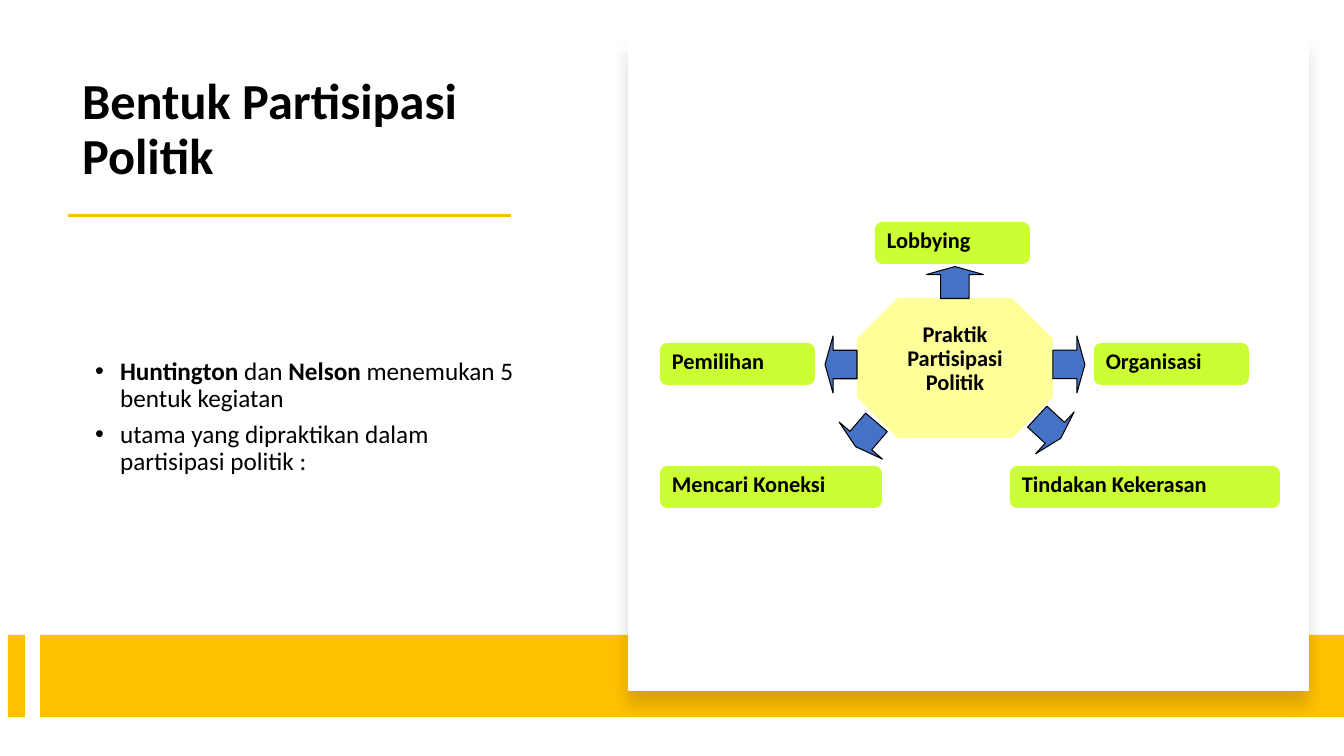
from lxml import etree
from pptx import Presentation
from pptx.dml.color import RGBColor
from pptx.enum.shapes import MSO_SHAPE as Preset
from pptx.enum.text import MSO_ANCHOR as Anchor, MSO_AUTO_SIZE as AutoSize, PP_ALIGN as Align
from pptx.oxml.ns import qn
from pptx.util import Pt

EMU_PER_PX = 914400 / 100.8
COLORS = {
    "gold": "FFC000",
    "white": "FFFFFF",
    "black": "000000",
    "lime": "CCFF33",
    "cream": "FFFF99",
    "blue": "4472C4",
}


def px(*lengths):
    return [round(length * EMU_PER_PX) for length in lengths]


def write_text(paragraph, text, size=16, bold=True, align=Align.LEFT, space_after=0):
    run = paragraph.add_run()
    run.text = text
    run.font.name = "Calibri"
    run.font.size = Pt(size)
    run.font.bold = bold
    run.font.color.rgb = RGBColor.from_string(COLORS["black"])
    paragraph.alignment = align
    paragraph.line_spacing = 0.9
    paragraph.space_before = Pt(0)
    paragraph.space_after = Pt(space_after)


presentation = Presentation()
presentation.slide_width, presentation.slide_height = px(1344, 756)
slide = presentation.slides.add_slide(presentation.slide_layouts[1])
title, body = slide.placeholders

# Title and list
for placeholder, top, height, anchor in (
    (title, 58, 132, Anchor.BOTTOM),
    (body, 224, 387, Anchor.MIDDLE),
):
    placeholder.left, placeholder.top, placeholder.width, placeholder.height = px(72, top, 472, height)
    placeholder.text_frame.word_wrap = True
    placeholder.text_frame.auto_size = AutoSize.NONE
    placeholder.text_frame.vertical_anchor = anchor

write_text(title.text_frame.paragraphs[0], "Bentuk Partisipasi Politik", size=36, space_after=6)

list_items = [
    [("Huntington ", True), ("dan ", False), ("Nelson", True), (" menemukan 5 bentuk kegiatan", False)],
    [("utama yang dipraktikan dalam partisipasi politik :", False)],
]
body.text_frame.add_paragraph()
for paragraph, runs in zip(body.text_frame.paragraphs, list_items):
    for text, bold in runs:
        write_text(paragraph, text, size=18, bold=bold, space_after=6)
    properties = paragraph._p.get_or_add_pPr()
    margin, indent = px(38, -25)
    properties.set("marL", str(margin))
    properties.set("indent", str(indent))
    etree.SubElement(properties, qn("a:buFont")).set("typeface", "Arial")
    etree.SubElement(properties, qn("a:buChar")).set("char", "•")

# Gold rule and footer bars, then the white panel over them
for color, *box in (
    ("gold", 68, 214, 443, 3),
    ("gold", 8, 635, 17, 82),
    ("gold", 40, 635, 1304, 82),
    ("white", 628, 39, 681, 652),
):
    panel = slide.shapes.add_shape(Preset.RECTANGLE, *px(*box))
    panel.shadow.inherit = False
    panel.fill.solid()
    panel.fill.fore_color.rgb = RGBColor.from_string(COLORS[color])
    panel.line.fill.background()

effects = panel._element.spPr.find(qn("a:effectLst"))
shadow = etree.SubElement(
    effects, qn("a:outerShdw"), blurRad=str(Pt(11)), dist=str(Pt(10)), dir="5400000", rotWithShape="0"
)
shadow_color = etree.SubElement(shadow, qn("a:srgbClr"), val=COLORS["black"])
etree.SubElement(shadow_color, qn("a:alpha"), val="15000")

# Central octagon and the five forms of participation
for text, preset, adjustment, color, align, *box in (
    ("Praktik Partisipasi Politik", Preset.OCTAGON, 0.29, "cream", Align.CENTER, 857, 298, 196, 140),
    ("Pemilihan", Preset.ROUNDED_RECTANGLE, 0.17, "lime", Align.LEFT, 660, 343, 155, 42),
    ("Lobbying", Preset.ROUNDED_RECTANGLE, 0.17, "lime", Align.LEFT, 875, 222, 155, 42),
    ("Organisasi", Preset.ROUNDED_RECTANGLE, 0.17, "lime", Align.LEFT, 1094, 343, 155, 42),
    ("Mencari Koneksi", Preset.ROUNDED_RECTANGLE, 0.17, "lime", Align.LEFT, 660, 466, 222, 42),
    ("Tindakan Kekerasan", Preset.ROUNDED_RECTANGLE, 0.17, "lime", Align.LEFT, 1010, 466, 270, 42),
):
    node = slide.shapes.add_shape(preset, *px(*box))
    node.adjustments[0] = adjustment
    node.shadow.inherit = False
    node.fill.solid()
    node.fill.fore_color.rgb = RGBColor.from_string(COLORS[color])
    node.line.fill.background()
    node.text_frame.word_wrap = True
    node.text_frame.vertical_anchor = Anchor.TOP
    write_text(node.text_frame.paragraphs[0], text, align=align)

# Arrows from the octagon to each form
for left, top, rotation in (
    (1053, 336, 0),
    (939, 254, 270),
    (825, 336, 180),
    (1033, 399, 42.7),
    (850, 406, 130.5),
):
    arrow = slide.shapes.add_shape(Preset.RIGHT_ARROW, *px(left, top, 32, 57))
    arrow.adjustments[0] = 0.5
    arrow.adjustments[1] = 0.25
    arrow.rotation = rotation
    arrow.shadow.inherit = False
    arrow.fill.solid()
    arrow.fill.fore_color.rgb = RGBColor.from_string(COLORS["blue"])
    arrow.line.color.rgb = RGBColor.from_string(COLORS["black"])
    arrow.line.width = Pt(0.75)

presentation.save("out.pptx")
